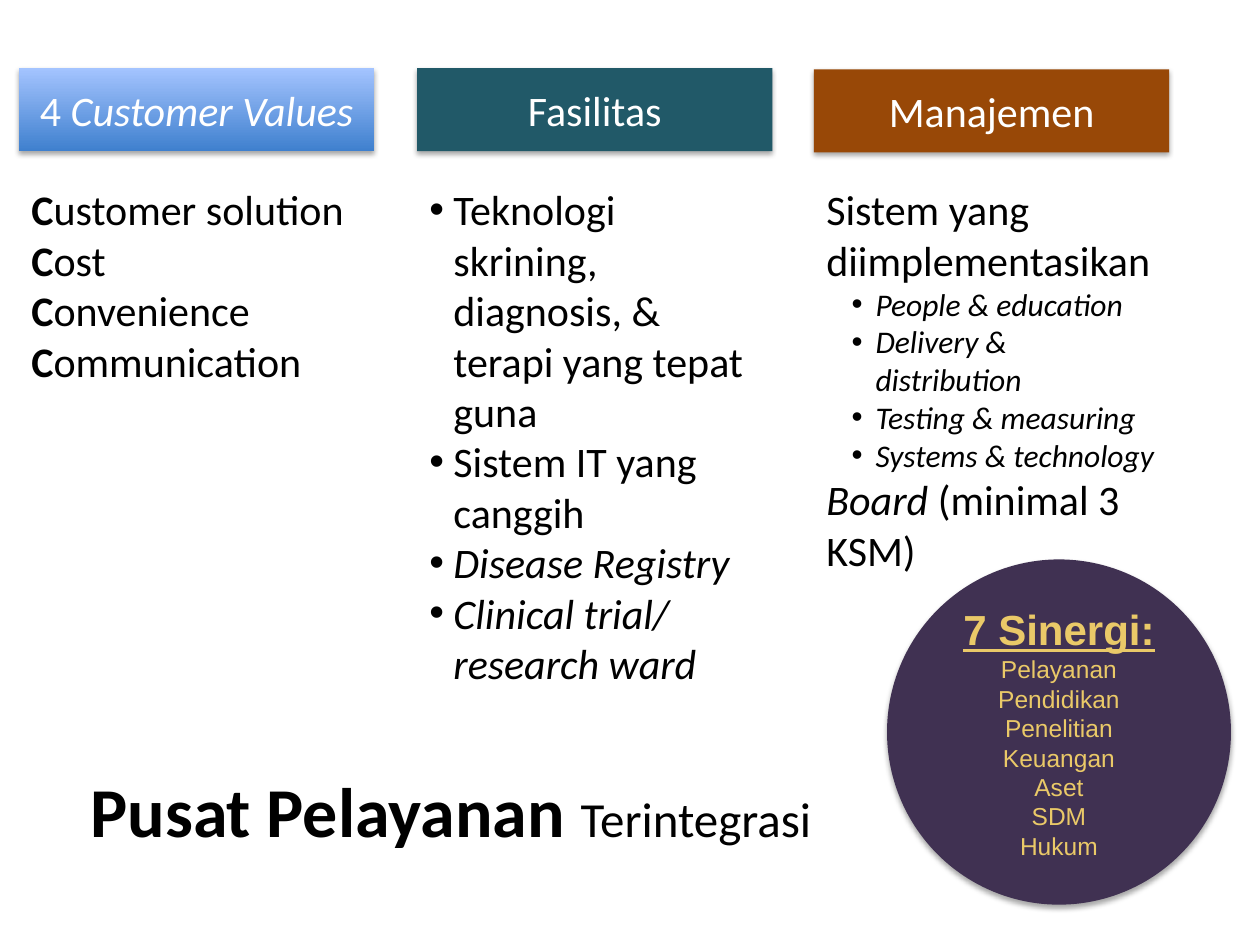
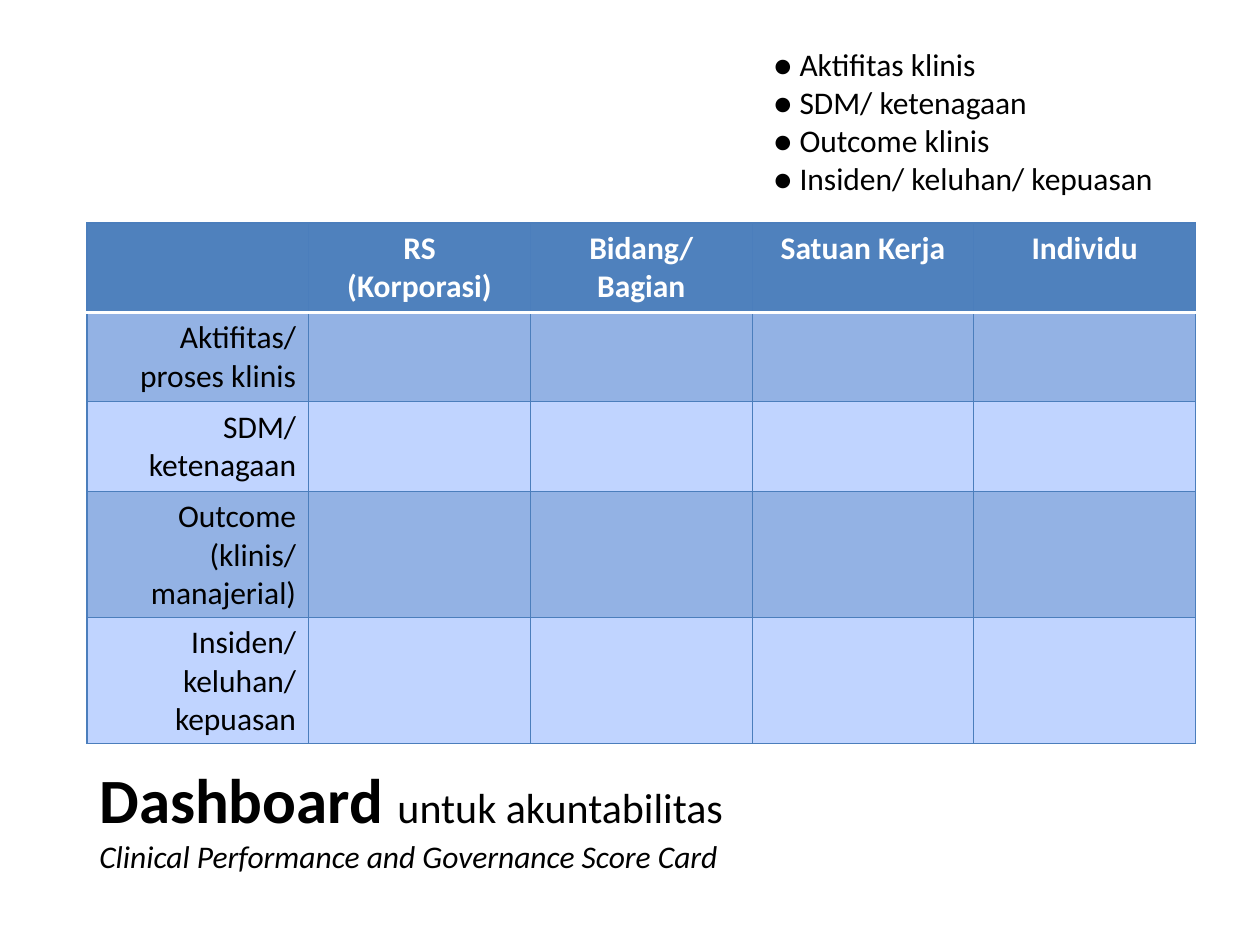
from lxml.etree import SubElement
from pptx import Presentation
from pptx.dml.color import RGBColor
from pptx.enum.shapes import MSO_SHAPE
from pptx.enum.text import MSO_ANCHOR, MSO_AUTO_SIZE, PP_ALIGN
from pptx.oxml.ns import qn
from pptx.util import Inches, Pt

BLACK, WHITE = "000000", "FFFFFF"
TEAL, BROWN, PURPLE, GOLD = "215968", "984807", "403152", "EAC968"
GRADIENT = ("3F80CE", "A4C4FF")
HEADER_BLUE, BORDER_BLUE = "4F81BD", "4B7EBC"
ROW_COLORS = ("93B2E4", "C0D4FF")


def rgb(color):
    return RGBColor.from_string(color)


def write(paragraph, text, size=24, color=BLACK, font="Calibri",
          bold=False, italic=False, underline=False):
    run = paragraph.add_run()
    run.text = text
    run.font.size = Pt(size)
    run.font.name = font
    run.font.color.rgb = rgb(color)
    run.font.bold, run.font.italic, run.font.underline = bold, italic, underline


def add_paragraph(frame, *runs, align=PP_ALIGN.LEFT, bullet_indent=None, **style):
    """Fill the next paragraph; a run is a text or a (text, format) pair."""
    first = frame.paragraphs[0]
    paragraph = frame.add_paragraph() if first.runs else first
    paragraph.alignment = align
    if bullet_indent:
        properties = paragraph._p.get_or_add_pPr()
        properties.set("marL", str(Inches(bullet_indent)))
        properties.set("indent", str(-Inches(0.19)))
        SubElement(properties, qn("a:buFont"), typeface="Arial")
        SubElement(properties, qn("a:buChar"), char="•")
    for run in runs:
        text, extra = (run, {}) if isinstance(run, str) else run
        write(paragraph, text, **{**style, **extra})


def add_shadow(shape):
    shape.shadow.inherit = False
    effects = shape._element.spPr.find(qn("a:effectLst"))
    shadow = SubElement(effects, qn("a:outerShdw"), blurRad=str(Pt(3.1)),
                        dist=str(Pt(1.8)), dir="5400000", rotWithShape="0")
    color = SubElement(shadow, qn("a:srgbClr"), val=BLACK)
    SubElement(color, qn("a:alpha"), val="35000")


def set_border(cell, side, color, width):
    line = SubElement(cell._tc.get_or_add_tcPr(), qn(f"a:ln{side}"), w=str(Pt(width)))
    fill = SubElement(line, qn("a:solidFill"))
    SubElement(fill, qn("a:srgbClr"), val=color)


class Deck:
    """Holds the presentation and the slide being built."""

    def __init__(self):
        self.presentation = Presentation()
        self.presentation.slide_width = Inches(10)
        self.presentation.slide_height = Inches(7.5)
        self.slide = None

    def add_slide(self):
        self.slide = self.presentation.slides.add_slide(self.presentation.slide_layouts[6])

    def add_text_box(self, left, top, width, height):
        box = self.slide.shapes.add_textbox(
            Inches(left), Inches(top), Inches(width), Inches(height))
        frame = box.text_frame
        frame.word_wrap = True
        frame.auto_size = MSO_AUTO_SIZE.SHAPE_TO_FIT_TEXT
        return frame

    def add_panel(self, kind, left, top, width, height, fill):
        """Add a shadowed shape; a pair of colours runs from bottom to top."""
        shape = self.slide.shapes.add_shape(
            kind, Inches(left), Inches(top), Inches(width), Inches(height))
        if isinstance(fill, str):
            shape.fill.solid()
            shape.fill.fore_color.rgb = rgb(fill)
        else:
            shape.fill.gradient()
            shape.fill.gradient_angle = 90
            for stop, color in zip(shape.fill.gradient_stops, fill):
                stop.color.rgb = rgb(color)
        shape.line.fill.background()
        add_shadow(shape)
        shape.text_frame.word_wrap = True
        shape.text_frame.vertical_anchor = MSO_ANCHOR.MIDDLE
        return shape.text_frame

    def add_heading(self, left, top, fill, *runs):
        frame = self.add_panel(MSO_SHAPE.RECTANGLE, left, top, 2.82, 0.66, fill)
        add_paragraph(frame, *runs, align=PP_ALIGN.CENTER, color=WHITE)

    def add_score_table(self, left, top, column_width, row_heights, headers, labels):
        rows, columns = len(row_heights), len(headers)
        table = self.slide.shapes.add_table(
            rows, columns, Inches(left), Inches(top),
            Inches(column_width * columns), Inches(sum(row_heights))).table
        for column in table.columns:
            column.width = Inches(column_width)
        for row, height in zip(table.rows, row_heights):
            row.height = Inches(height)
        for row in range(rows):
            for column in range(columns):
                self.style_cell(table.cell(row, column), row)
        for column, header in enumerate(headers):
            for text in filter(None, header.split("\n")):
                add_paragraph(table.cell(0, column).text_frame, text,
                              align=PP_ALIGN.CENTER, size=18, color=WHITE, bold=True)
        for row, label in enumerate(labels, 1):
            add_paragraph(table.cell(row, 0).text_frame, label,
                          align=PP_ALIGN.RIGHT, size=18)

    def style_cell(self, cell, row):
        thin, thick = (BORDER_BLUE, 0.75), (WHITE, 2)
        borders = {"L": thin, "R": thin,
                   "T": thick if row == 1 else thin,
                   "B": thick if row == 0 else thin}
        for side, (color, width) in borders.items():
            set_border(cell, side, color, width)
        cell.fill.solid()
        cell.fill.fore_color.rgb = rgb(ROW_COLORS[(row - 1) % 2] if row else HEADER_BLUE)


def build_service_slide(deck):
    deck.add_slide()
    title = deck.add_text_box(0.62, 6.04, 6.06, 0.77)
    add_paragraph(title, ("Pusat Pelayanan ", {"size": 40, "bold": True}),
                  "Terintegrasi", size=28)

    deck.add_heading(0.15, 0.54, GRADIENT, "4 ", ("Customer Values", {"italic": True}))
    deck.add_heading(3.31, 0.54, TEAL, "Fasilitas")
    deck.add_heading(6.46, 0.55, BROWN, "Manajemen")

    values = deck.add_text_box(0.15, 1.41, 3.11, 1.72)
    for value in ("Customer solution", "Cost", "Convenience", "Communication"):
        add_paragraph(values, (value[0], {"bold": True}), value[1:])

    facilities = deck.add_text_box(3.31, 1.41, 2.82, 4.14)
    for facility, italic in (
            ("Teknologi skrining, diagnosis, & terapi yang tepat guna", False),
            ("Sistem IT yang canggih", False),
            ("Disease Registry", True),
            ("Clinical trial/ research ward", True)):
        add_paragraph(facilities, facility, bullet_indent=0.19, italic=italic)

    management = deck.add_text_box(6.46, 1.41, 2.82, 3.23)
    add_paragraph(management, "Sistem yang diimplementasikan")
    for system in ("People & education", "Delivery & distribution",
                   "Testing & measuring", "Systems & technology"):
        add_paragraph(management, system, bullet_indent=0.39, size=18, italic=True)
    add_paragraph(management, ("Board", {"italic": True}), " (minimal 3 KSM)")

    synergy = deck.add_panel(MSO_SHAPE.OVAL, 7.04, 4.44, 2.73, 2.74, PURPLE)
    synergy_style = {"align": PP_ALIGN.CENTER, "color": GOLD, "font": "Arial"}
    add_paragraph(synergy, "7 Sinergi:", bold=True, underline=True, **synergy_style)
    for field in ("Pelayanan", "Pendidikan", "Penelitian", "Keuangan",
                  "Aset", "SDM", "Hukum"):
        add_paragraph(synergy, field, size=14, **synergy_style)


def build_dashboard_slide(deck):
    deck.add_slide()
    title = deck.add_text_box(0.69, 5.99, 6, 1.01)
    add_paragraph(title, ("Dashboard ", {"size": 36, "bold": True}), "untuk akuntabilitas")
    add_paragraph(title, "Clinical Performance and Governance Score Card",
                  size=18, italic=True)

    topics = deck.add_text_box(6.04, 0.31, 3.47, 1.31)
    for topic in ("Aktifitas klinis", "SDM/ ketenagaan", "Outcome klinis",
                  "Insiden/ keluhan/ kepuasan"):
        add_paragraph(topics, f"● {topic}", size=18)

    deck.add_score_table(
        0.69, 1.77, 1.76, (0.71, 0.71, 0.71, 1, 1),
        headers=("", "RS\n(Korporasi)", "Bidang/ Bagian", "Satuan Kerja", "Individu"),
        labels=("Aktifitas/ proses klinis", "SDM/ ketenagaan",
                "Outcome (klinis/ manajerial)", "Insiden/ keluhan/ kepuasan"))


def main():
    deck = Deck()
    build_service_slide(deck)
    build_dashboard_slide(deck)
    deck.presentation.save("out.pptx")


if __name__ == "__main__":
    main()
